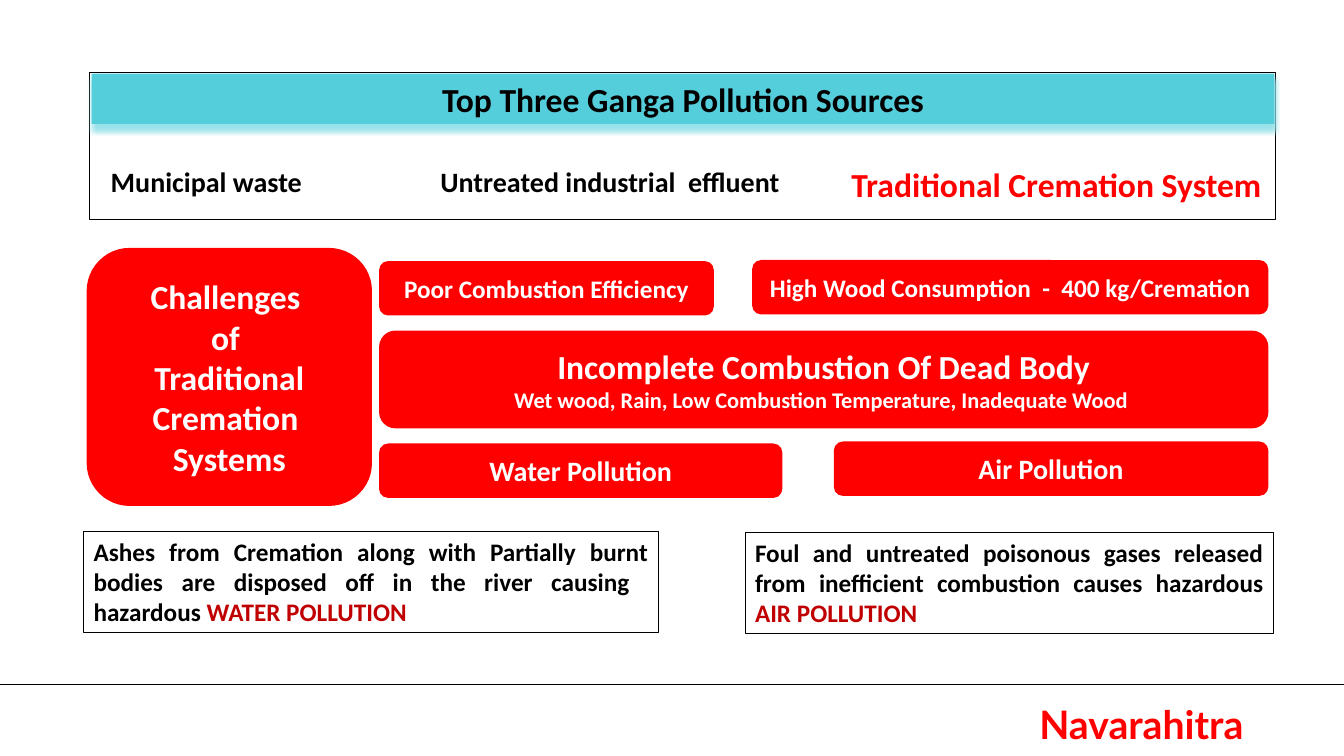
from lxml import etree
from pptx import Presentation
from pptx.dml.color import RGBColor
from pptx.enum.shapes import MSO_CONNECTOR, MSO_SHAPE
from pptx.enum.text import MSO_ANCHOR, PP_ALIGN
from pptx.oxml.ns import qn
from pptx.util import Inches, Pt

RECT, ROUNDED = MSO_SHAPE.RECTANGLE, MSO_SHAPE.ROUNDED_RECTANGLE
STRAIGHT = MSO_CONNECTOR.STRAIGHT
TOP, MIDDLE = MSO_ANCHOR.TOP, MSO_ANCHOR.MIDDLE
LEFT, CENTER, RIGHT, JUSTIFY = PP_ALIGN.LEFT, PP_ALIGN.CENTER, PP_ALIGN.RIGHT, PP_ALIGN.JUSTIFY

BLACK = RGBColor(0x00, 0x00, 0x00)
WHITE = RGBColor(0xFF, 0xFF, 0xFF)
RED = RGBColor(0xFF, 0x00, 0x00)
DARK_RED = RGBColor(0xC0, 0x00, 0x00)
TEAL = RGBColor(0x55, 0xCE, 0xDB)
PALE_TEAL = RGBColor(0x99, 0xE2, 0xE9)

SLIDE_W, SLIDE_H = 13.33, 7.5
BODY_FONT, BRAND_FONT = "Calibri", "Lato"
TITLE = "Top Three Ganga Pollution Sources"
BRAND = "Navarahitra"

SOURCES = [
    ("Municipal waste", 20, BLACK, LEFT, 1.0, 2.3, 0.44),
    ("Untreated industrial  effluent", 20, BLACK, CENTER, 4.19, 3.72, 0.44),
    ("Traditional Cremation System", 24, RED, RIGHT, 8.15, 4.46, 0.5),
]
CHALLENGES_HEADING = [("Challenges ", 24), ("of ", 24), ("Traditional Cremation  Systems", 24)]
GRID_LEFT, GRID_RIGHT, BAR_H = 3.76, 12.58, 0.54
CHALLENGE_ROWS = [
    (2.59, 2.58, 3.32, 5.12,
     ("Poor Combustion Efficiency", 18), ("High Wood Consumption  -  400 kg/Cremation", 18)),
    (4.4, 4.38, 4.0, 4.31, ("Water Pollution", 20), ("Air Pollution", 20)),
]
INCOMPLETE_COMBUSTION = [
    ("Incomplete Combustion Of Dead Body", 24),
    ("Wet wood, Rain, Low Combustion Temperature, Inadequate Wood ", 16),
]
IMPACTS = [
    ("Ashes from Cremation along with Partially burnt bodies are disposed off in the river "
     "causing  hazardous ", "WATER POLLUTION", (0.83, 5.27, 5.7, 1.01)),
    ("Foul and untreated poisonous gases released from inefficient combustion causes "
     "hazardous ", "AIR POLLUTION ", (7.39, 5.28, 5.24, 1.01)),
]

prs = Presentation()
prs.slide_width, prs.slide_height = Inches(SLIDE_W), Inches(SLIDE_H)
slide = prs.slides.add_slide(prs.slide_layouts[6])
slide.background.fill.solid()
slide.background.fill.fore_color.rgb = WHITE


def add_panel(kind, box, fill=None, outline=None):
    panel = slide.shapes.add_shape(kind, *map(Inches, box))
    panel.shadow.inherit = False
    if fill is None:
        panel.fill.background()
    else:
        panel.fill.solid()
        panel.fill.fore_color.rgb = fill
    if outline is None:
        panel.line.fill.background()
    else:
        panel.line.color.rgb = outline
        panel.line.width = Pt(0.75)
    return panel


def write(holder, lines, color, align, anchor=TOP, font=BODY_FONT):
    frame = holder.text_frame
    frame.word_wrap = True
    frame.vertical_anchor = anchor
    for index, (wording, size) in enumerate(lines):
        paragraph = frame.add_paragraph() if index else frame.paragraphs[0]
        paragraph.alignment = align
        paragraph.font.name = font
        paragraph.font.size = Pt(size)
        paragraph.font.bold = True
        paragraph.font.color.rgb = color
        paragraph.add_run().text = wording
    return paragraph


def add_challenge(lines, box):
    write(add_panel(ROUNDED, box, RED), lines, WHITE, CENTER, MIDDLE)


def add_label(wording, size, color, align, box, font=BODY_FONT):
    write(slide.shapes.add_textbox(*map(Inches, box)), [(wording, size)], color, align, font=font)


def add_title_shadow(banner):
    effects = banner._element.spPr.find(qn("a:effectLst"))
    shadow = etree.SubElement(effects, qn("a:outerShdw"), blurRad=str(Pt(4)), dist=str(Pt(4)),
                              dir=str(90 * 60000), algn="t", rotWithShape="0")
    etree.SubElement(shadow, qn("a:srgbClr"), val=str(PALE_TEAL))


add_panel(RECT, (0.89, 0.72, 11.76, 1.46), outline=BLACK)
banner = add_panel(RECT, (0.91, 0.73, 11.73, 0.5), TEAL)
add_title_shadow(banner)
write(banner, [(TITLE, 24)], BLACK, CENTER)

for wording, size, color, align, left, width, height in SOURCES:
    add_label(wording, size, color, align, (left, 1.58, width, height))

add_challenge(CHALLENGES_HEADING, (0.86, 2.46, 2.83, 2.56))
add_challenge(INCOMPLETE_COMBUSTION, (GRID_LEFT, 3.28, GRID_RIGHT - GRID_LEFT, 0.97))
for left_top, right_top, left_width, right_width, left_line, right_line in CHALLENGE_ROWS:
    add_challenge([left_line], (GRID_LEFT, left_top, left_width, BAR_H))
    add_challenge([right_line], (GRID_RIGHT - right_width, right_top, right_width, BAR_H))

for cause, pollution, box in IMPACTS:
    impact = write(add_panel(RECT, box, outline=BLACK), [(cause, 18)], BLACK, JUSTIFY)
    emphasis = impact.add_run()
    emphasis.text = pollution
    emphasis.font.color.rgb = DARK_RED

footer_rule = slide.shapes.add_connector(STRAIGHT, *map(Inches, (0, 6.79, SLIDE_W, 6.79)))
footer_rule.line.color.rgb = BLACK
footer_rule.line.width = Pt(1)
etree.SubElement(footer_rule._element.spPr, qn("a:effectLst"))
add_label(BRAND, 28, RED, LEFT, (10.21, 6.9, 2.77, 0.57), BRAND_FONT)

prs.save("out.pptx")
